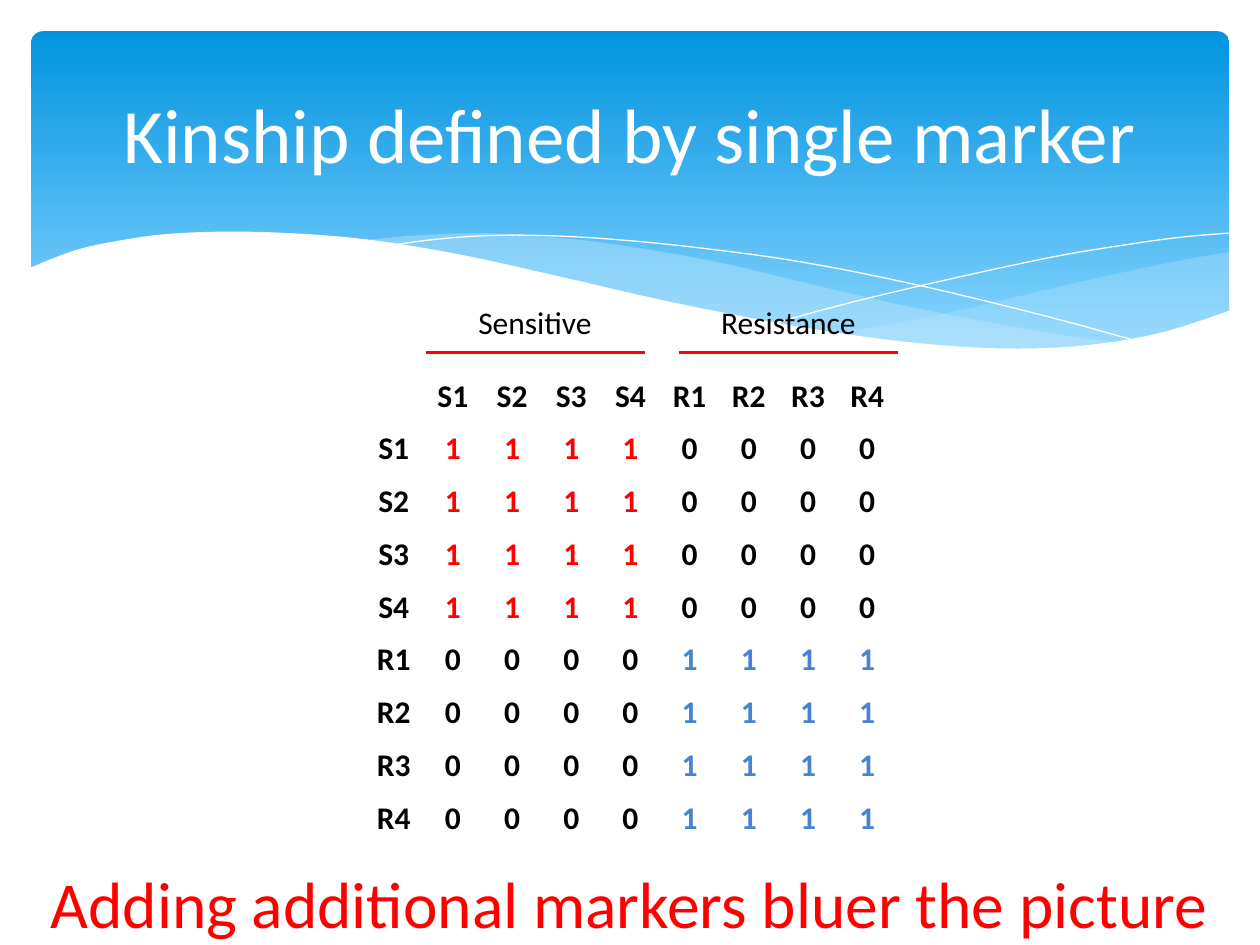
import pptx
import pptx.dml.color
import pptx.enum.shapes
import pptx.enum.text
import pptx.oxml.ns
import pptx.oxml.xmlchemy
import pptx.util
from pptx.util import Cm

COLORS = {
    "white": "FFFFFF", "black": "000000", "red": "FF0000", "blue": "4584D3",
    "banner_top": "0293E0", "banner_bottom": "83D3FE", "wave": "C6E7FC",
}
FONT = "Calibri"

# Wave outlines as knots in centimetres; smooth() rounds them.
RIGHT_WAVE_TOP = [(24.79, 5.08), (23.75, 5.26), (21.87, 5.66), (19.79, 6.15),
                  (18.52, 6.43), (16.79, 6.73)]
RIGHT_WAVE_BOTTOM = [(16.79, 6.73), (17.55, 6.83), (18.59, 6.96), (19.84, 7.04),
                     (20.68, 7.06), (21.69, 7.01), (22.78, 6.86), (23.75, 6.65),
                     (24.79, 6.27)]
MIDDLE_WAVE_TOP = [(22.68, 6.93), (21.26, 6.73), (19.69, 6.45), (17.93, 6.1),
                   (15.98, 5.64), (14.45, 5.28), (13.06, 5.03), (11.81, 4.85),
                   (10.67, 4.75), (9.65, 4.7), (8.33, 4.75), (7.26, 4.85)]
MIDDLE_WAVE_BOTTOM = [(7.26, 4.85), (8.2, 4.98), (9.73, 5.26), (11.4, 5.64),
                      (13.46, 6.1), (15.27, 6.48), (16.89, 6.76), (18.34, 6.96),
                      (19.63, 7.04), (20.78, 7.06), (21.77, 7.04), (22.68, 6.93)]
FALLING_LINE = [(7.85, 4.95), (8.74, 4.83), (9.83, 4.75), (11, 4.75),
                (12.42, 4.83), (14.12, 5), (16.15, 5.28), (18.47, 5.74),
                (21.11, 6.38), (23.04, 6.91)]
RISING_LINE = [(15.57, 6.53), (17.07, 6.12), (19, 5.66), (21.23, 5.18),
               (22.73, 4.93), (23.83, 4.78), (24.77, 4.7)]
WHITE_WAVE = [(24.82, 6.25), (23.62, 6.65), (22.53, 6.88), (21.26, 7.01),
              (19.76, 7.01), (17.98, 6.86), (15.9, 6.55), (13.44, 6.07),
              (11.35, 5.59), (9.27, 5.13), (7.42, 4.83), (5.84, 4.7),
              (4.5, 4.67), (3.35, 4.72), (2.41, 4.85), (1.5, 5.05), (0.58, 5.41)]
WHITE_CORNERS = [(0.58, 8.36), (24.82, 8.36)]


def rgb(name):
    return pptx.dml.color.RGBColor.from_string(COLORS[name])


def smooth(knots, steps=4):
    """Return points on a Catmull-Rom curve through the knots."""
    padded = [knots[0], *knots, knots[-1]]
    points = [knots[0]]
    for before, start, end, after in zip(padded, padded[1:], padded[2:], padded[3:]):
        for step in range(1, steps + 1):
            t = step / steps
            points.append(tuple(
                b + 0.5 * t * (c - a + t * (2 * a - 5 * b + 4 * c - d
                                            + t * (3 * (b - c) + d - a)))
                for a, b, c, d in zip(before, start, end, after)))
    return points


class SlideBuilder:
    """Holds the text style and the slide being filled; lengths are centimetres."""

    def __init__(self, slide, font):
        self.slide = slide
        self.shapes = slide.shapes
        self.font = font

    def style_text(self, frame, size, color, bold=False):
        for para in frame.paragraphs:
            para.alignment = pptx.enum.text.PP_ALIGN.CENTER
            for span in para.runs:
                span.font.name = self.font
                span.font.size = pptx.util.Pt(size)
                span.font.bold = bold
                span.font.color.rgb = rgb(color)

    def text(self, words, left, top, width, height, size, color):
        box = self.shapes.add_textbox(Cm(left), Cm(top), Cm(width), Cm(height))
        box.text_frame.word_wrap = True
        box.text_frame.vertical_anchor = pptx.enum.text.MSO_ANCHOR.MIDDLE
        box.text_frame.text = words
        self.style_text(box.text_frame, size, color)

    def banner(self, left, top, width, height):
        box = self.shapes.add_shape(
            pptx.enum.shapes.MSO_SHAPE.ROUNDED_RECTANGLE,
            Cm(left), Cm(top), Cm(width), Cm(height))
        box.adjustments[0] = 0.034
        box.shadow.inherit = False
        box.line.fill.background()
        box.fill.gradient()
        box.fill.gradient_angle = 270
        stops = zip(box.fill.gradient_stops, ("banner_top", "banner_bottom"), (0, 0.9))
        for stop, color, position in stops:
            stop.color.rgb = rgb(color)
            stop.position = position

    def outline(self, points, closed):
        places = [(Cm(x), Cm(y)) for x, y in points]
        builder = self.shapes.build_freeform(*places[0])
        builder.add_line_segments(places[1:], close=closed)
        shape = builder.convert_to_shape()
        shape.shadow.inherit = False
        return shape

    def wave(self, points, color, opacity=100):
        shape = self.outline(points, closed=True)
        shape.line.fill.background()
        shape.fill.solid()
        shape.fill.fore_color.rgb = rgb(color)
        if opacity < 100:
            tint = shape._element.spPr.find(".//" + pptx.oxml.ns.qn("a:srgbClr"))
            alpha = pptx.oxml.xmlchemy.OxmlElement("a:alpha")
            alpha.set("val", str(opacity * 1000))
            tint.append(alpha)

    def hairline(self, points):
        shape = self.outline(points, closed=False)
        shape.fill.background()
        shape.line.color.rgb = rgb("white")
        shape.line.width = 0

    def rule(self, left, right, y):
        line = self.shapes.add_connector(
            pptx.enum.shapes.MSO_CONNECTOR.STRAIGHT, Cm(right), Cm(y), Cm(left), Cm(y))
        line.line.color.rgb = rgb("red")
        line.line.width = pptx.util.Pt(2)
        line._element.spPr.append(pptx.oxml.xmlchemy.OxmlElement("a:effectLst"))

    def kinship_table(self, names, left, top, width, height):
        """Show 1 for two lines of the same group (first letter), otherwise 0."""
        count = len(names) + 1
        table = self.shapes.add_table(
            count, count, Cm(left), Cm(top), Cm(width), Cm(height)).table
        table.first_row = table.horz_banding = False
        group_colors = {"S": "red", "R": "blue"}
        headings = ["", *names]
        for row, row_name in enumerate(headings):
            for column, column_name in enumerate(headings):
                words, color = row_name or column_name, "black"
                if row and column:
                    related = row_name[0] == column_name[0]
                    words = "1" if related else "0"
                    color = group_colors[row_name[0]] if related else "black"
                self.table_cell(table.cell(row, column), words, color)

    def table_cell(self, cell, words, color):
        cell.fill.background()
        cell.margin_left = cell.margin_right = cell.margin_top = Cm(0.03)
        cell.margin_bottom = 0
        cell.vertical_anchor = pptx.enum.text.MSO_ANCHOR.MIDDLE
        cell.text_frame.text = words
        self.style_text(cell.text_frame, 18, color, bold=True)


def main():
    deck = pptx.Presentation()
    deck.slide_width, deck.slide_height = Cm(25.4), Cm(19.05)
    page = SlideBuilder(deck.slides.add_slide(deck.slide_layouts[6]), FONT)

    page.banner(0.63, 0.63, 24.15, 6.86)
    page.wave(smooth(RIGHT_WAVE_TOP) + smooth(RIGHT_WAVE_BOTTOM), "wave", 29)
    page.wave(smooth(MIDDLE_WAVE_TOP) + smooth(MIDDLE_WAVE_BOTTOM), "wave", 40)
    page.hairline(smooth(FALLING_LINE))
    page.hairline(smooth(RISING_LINE))
    page.wave(smooth(WHITE_WAVE) + WHITE_CORNERS, "white")

    page.text("Kinship defined by single marker", 1.27, 0.94, 22.86, 3.48, 44, "white")
    names = [group + str(number) for group in "SR" for number in range(1, 5)]
    page.kinship_table(names, 7.34, 7.44, 10.74, 9.58)
    for label, left in (("Sensitive", 8.58), ("Resistance", 13.69)):
        page.rule(left, left + 4.42, 7.11)
        page.text(label, left + 0.4, 5.99, 3.61, 1.02, 18, "black")
    page.text("Adding additional markers bluer the picture",
              0, 17.32, 25.4, 1.73, 37.4, "red")

    deck.save("out.pptx")


if __name__ == "__main__":
    main()
